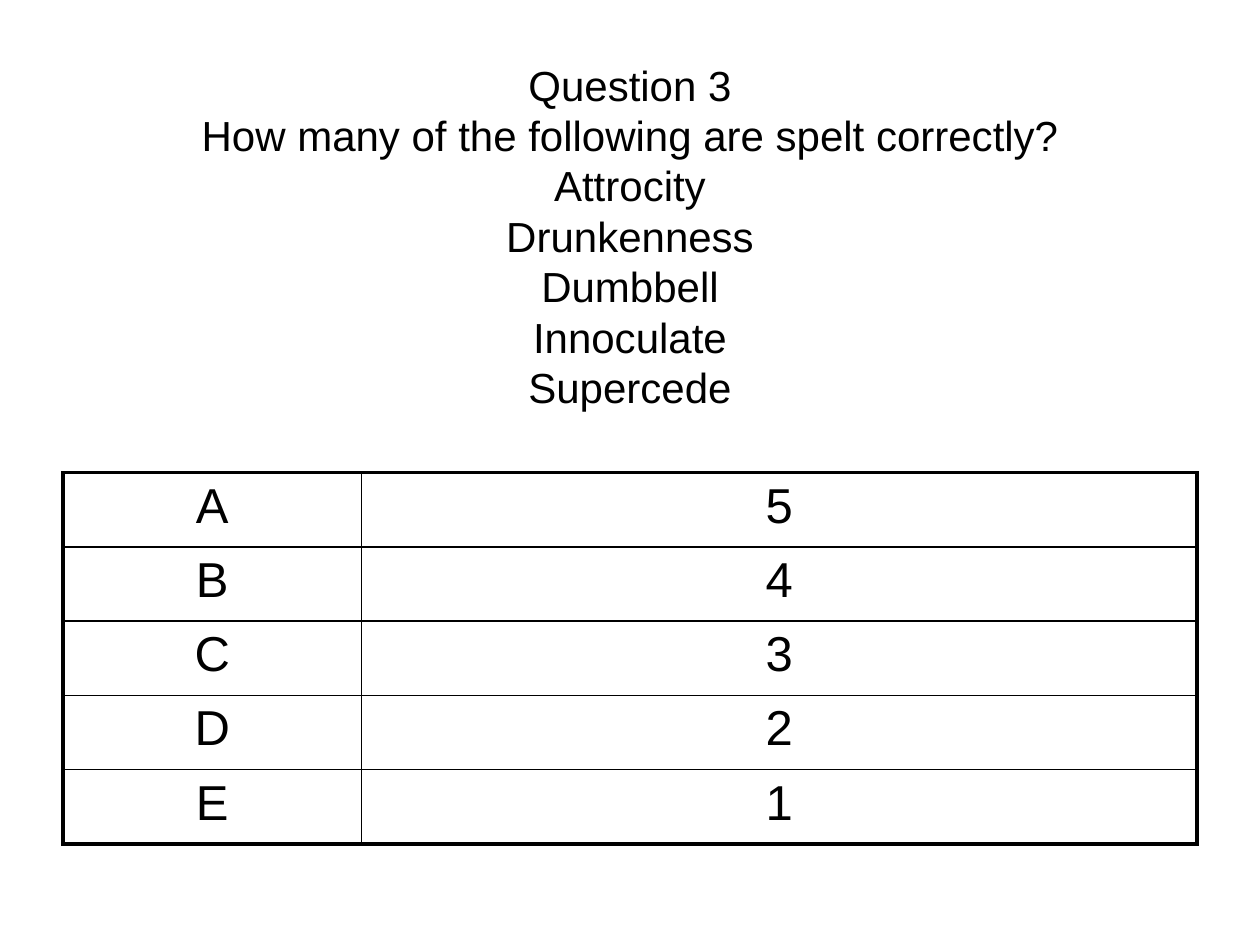
from dataclasses import dataclass

from lxml import etree
from pptx import Presentation
from pptx.dml.color import RGBColor
from pptx.enum.text import MSO_ANCHOR, PP_ALIGN
from pptx.oxml.ns import qn
from pptx.slide import Slide
from pptx.table import _Cell
from pptx.text.text import _Paragraph
from pptx.util import Cm, Pt

CENTER = PP_ALIGN.CENTER
MIDDLE = MSO_ANCHOR.MIDDLE


@dataclass(frozen=True)
class Theme:
    ink: str = "000000"
    face: str = "Arial"
    ask: int = 24
    pick: int = 28
    thick: float = 2.25
    thin: float = 1
    gap: int = 20


@dataclass(frozen=True)
class Box:
    left: float
    top: float
    width: float
    height: float

    def place(self) -> tuple:
        return tuple(Cm(n) for n in (self.left, self.top, self.width, self.height))


@dataclass(frozen=True)
class Choice:
    letter: str
    count: str


THEME = Theme()
ASK_BOX = Box(1.27, 0.76, 22.86, 7.98)
GRID_BOX = Box(1.27, 9.53, 22.86, 7.48)
COLS = (6.02, 16.84)
ASK = "\n".join((
    "Question 3",
    "How many of the following are spelt correctly?",
    "Attrocity",
    "Drunkenness",
    "Dumbbell",
    "Innoculate",
    "Supercede",
))
CHOICES = [Choice(*pair) for pair in zip("ABCDE", "54321")]


def write(para: _Paragraph, text: str, size: int) -> None:
    para.text = text
    para.alignment = CENTER
    for run in para.runs:
        for name, value in {"name": THEME.face, "size": Pt(size)}.items():
            setattr(run.font, name, value)
        run.font.color.rgb = RGBColor.from_string(THEME.ink)


def space(para: _Paragraph) -> None:
    """Set the space before as a share of the type size."""
    before = etree.Element(qn("a:spcBef"))
    etree.SubElement(before, qn("a:spcPct"), val=str(THEME.gap * 1000))
    para._p.get_or_add_pPr().insert(0, before)


def rule(cell: _Cell, outer: dict[str, bool]) -> None:
    """Draw the cell borders, thick where the side is on the table's edge."""
    props = cell._tc.get_or_add_tcPr()
    for spot, (side, edge) in enumerate(outer.items()):
        width = Pt(THEME.thick if edge else THEME.thin)
        line = etree.Element(qn(f"a:ln{side}"), w=str(int(width)))
        fill = etree.SubElement(line, qn("a:solidFill"))
        etree.SubElement(fill, qn("a:srgbClr"), val=THEME.ink)
        props.insert(spot, line)


def add_ask(slide: Slide) -> None:
    frame = slide.shapes.add_textbox(*ASK_BOX.place()).text_frame
    for name, value in {"word_wrap": True, "vertical_anchor": MIDDLE}.items():
        setattr(frame, name, value)
    write(frame.paragraphs[0], ASK, THEME.ask)


def add_grid(slide: Slide) -> None:
    rows, cols = len(CHOICES), len(COLS)
    table = slide.shapes.add_table(rows, cols, *GRID_BOX.place()).table
    for name in ("first_row", "horz_banding"):
        setattr(table, name, False)
    for col, width in zip(table.columns, COLS):
        col.width = Cm(width)
    for r, choice in enumerate(CHOICES):
        for c, text in enumerate((choice.letter, choice.count)):
            cell = table.cell(r, c)
            cell.fill.background()
            para = cell.text_frame.paragraphs[0]
            write(para, text, THEME.pick)
            space(para)
            rule(cell, {"L": c == 0, "R": c == cols - 1,
                        "T": r == 0, "B": r == rows - 1})


def main() -> None:
    deck = Presentation()
    deck.slide_width, deck.slide_height = Cm(25.4), Cm(19.05)
    slide = deck.slides.add_slide(deck.slide_layouts[6])
    add_ask(slide)
    add_grid(slide)
    deck.save("out.pptx")


if __name__ == "__main__":
    main()
